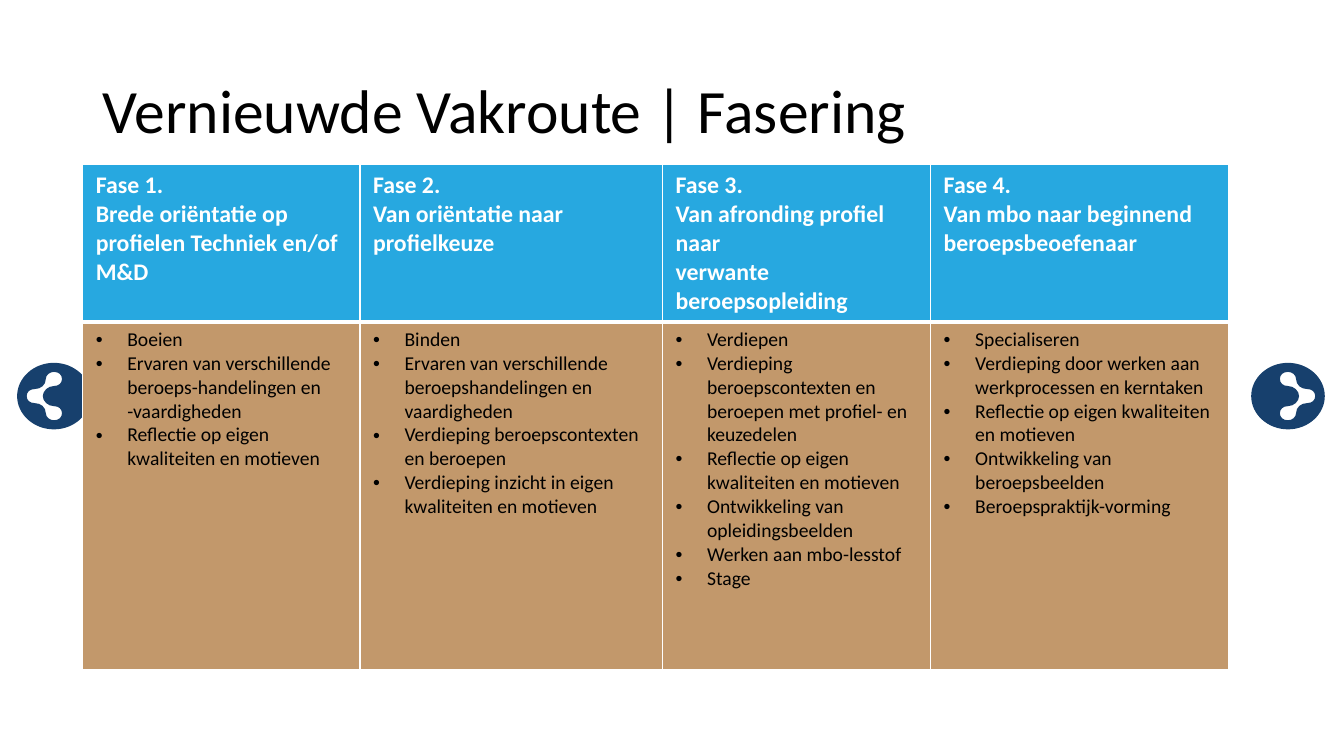
import pptx
import pptx.dml.color
import pptx.enum.text
import pptx.oxml
import pptx.oxml.ns
import pptx.util
from pptx.util import Inches

# Content
TITLE = "Vernieuwde Vakroute | Fasering"
PHASES = [
    (
        ["Fase 1.", "Brede oriëntatie op profielen Techniek en/of M&D"],
        [
            "Boeien",
            "Ervaren van verschillende beroeps-handelingen en -vaardigheden",
            "Reflectie op eigen kwaliteiten en motieven",
        ],
    ),
    (
        ["Fase 2.", "Van oriëntatie naar profielkeuze"],
        [
            "Binden",
            "Ervaren van verschillende beroepshandelingen en vaardigheden",
            "Verdieping beroepscontexten en beroepen",
            "Verdieping inzicht in eigen kwaliteiten en motieven",
        ],
    ),
    (
        ["Fase 3.", "Van afronding profiel naar", "verwante beroepsopleiding"],
        [
            "Verdiepen",
            "Verdieping beroepscontexten en beroepen met profiel- en keuzedelen",
            "Reflectie op eigen kwaliteiten en motieven",
            "Ontwikkeling van opleidingsbeelden",
            "Werken aan mbo-lesstof",
            "Stage",
        ],
    ),
    (
        ["Fase 4.", "Van mbo naar beginnend beroepsbeoefenaar"],
        [
            "Specialiseren",
            "Verdieping door werken aan werkprocessen en kerntaken",
            "Reflectie op eigen kwaliteiten en motieven",
            "Ontwikkeling van beroepsbeelden",
            "Beroepspraktijk-vorming",
        ],
    ),
]

# Style and layout
FONT = "Calibri"
BLACK = pptx.dml.color.RGBColor(0x00, 0x00, 0x00)
WHITE = pptx.dml.color.RGBColor(0xFF, 0xFF, 0xFF)
NAVY = pptx.dml.color.RGBColor(0x17, 0x40, 0x6D)
SKY = pptx.dml.color.RGBColor(0x27, 0xA8, 0xE0)
TAN = pptx.dml.color.RGBColor(0xC2, 0x98, 0x6B)
COLUMN_WIDTHS = [2.75, 3, 2.66, 2.96]
ROW_HEIGHTS = [1.48, 3.45]
BULLET_INDENT = Inches(5 / 16)

# Navigation badges: (left, direction), one mirrored from the other
BADGES = [(12.41, 1), (0.17, -1)]
BADGE_TOP = 3.6
BADGE_WIDTH, BADGE_HEIGHT = 0.73, 0.66
# Upper halves of both outlines around the badge centre: a start point,
# then two control points and an end point for each cubic curve
OPENING = [
    (0.11, 0),
    (0.11, -0.05), (0.06, -0.1), (0, -0.1),
    (-0.05, -0.1), (-0.08, -0.13), (-0.08, -0.17),
    (-0.08, -0.21), (-0.05, -0.24), (0, -0.24),
    (0.04, -0.24), (0.08, -0.21), (0.08, -0.17),
    (0.08, -0.11), (0.13, -0.07), (0.19, -0.07),
    (0.24, -0.07), (0.27, -0.04), (0.27, 0),
]
UNIT_RIM = [(-1, 0), (-1, -0.55), (-0.55, -1), (0, -1), (0.55, -1), (1, -0.55), (1, 0)]
RIM = [(x * BADGE_WIDTH / 2, y * BADGE_HEIGHT / 2) for x, y in UNIT_RIM]


def write_text(text_frame, lines, size, color, bold=False, bulleted=False, spacing=None):
    for index, line in enumerate(lines):
        paragraph = text_frame.paragraphs[0] if index == 0 else text_frame.add_paragraph()
        paragraph.text = line
        paragraph.alignment = pptx.enum.text.PP_ALIGN.LEFT
        if spacing:
            paragraph.line_spacing = spacing
        if bulleted:
            properties = paragraph._p.get_or_add_pPr()
            properties.set("marL", str(BULLET_INDENT))
            properties.set("indent", str(-BULLET_INDENT))
            for tag, name, value in [("buFont", "typeface", "Arial"), ("buChar", "char", "•")]:
                bullet = pptx.oxml.parse_xml(
                    f'<a:{tag} {pptx.oxml.ns.nsdecls("a")} {name}="{value}"/>'
                )
                properties.append(bullet)
        font = paragraph.runs[0].font
        font.name = FONT
        font.size = pptx.util.Pt(size)
        font.bold = bold
        font.color.rgb = color


def set_borders(cell, color, **widths):
    properties = cell._tc.get_or_add_tcPr()
    for index, (side, width) in enumerate(widths.items()):
        border = pptx.oxml.parse_xml(
            f'<a:ln{side} {pptx.oxml.ns.nsdecls("a")} w="{pptx.util.Pt(width)}">'
            f'<a:solidFill><a:srgbClr val="{color}"/></a:solidFill></a:ln{side}>'
        )
        properties.insert(index, border)


def curve_segments(shape):
    """Turn every three line segments into one cubic curve."""
    lines = list(shape._element.iter(pptx.oxml.ns.qn("a:lnTo")))
    for start in range(0, len(lines), 3):
        curve = pptx.oxml.parse_xml(f'<a:cubicBezTo {pptx.oxml.ns.nsdecls("a")}/>')
        lines[start].addprevious(curve)
        for line in lines[start:start + 3]:
            curve.append(line[0])
            line.getparent().remove(line)


def add_badge(slide, left, direction):
    center_x, center_y = left + BADGE_WIDTH / 2, BADGE_TOP + BADGE_HEIGHT / 2
    builder = None
    for half in (OPENING, RIM):
        outline = half + [(x, -y) for x, y in reversed(half[:-1])]
        points = [
            (Inches(center_x + direction * x), Inches(center_y + y)) for x, y in outline
        ]
        if builder is None:
            builder = slide.shapes.build_freeform(*points[0])
        else:
            builder.move_to(*points[0])
        builder.add_line_segments(points[1:], close=False)
    badge = builder.convert_to_shape()
    curve_segments(badge)
    badge.shadow.inherit = False
    badge.fill.solid()
    badge.fill.fore_color.rgb = NAVY
    badge.line.fill.background()


def add_phase_table(slide):
    frame = slide.shapes.add_table(
        len(ROW_HEIGHTS), len(PHASES), Inches(0.82), Inches(1.63),
        Inches(sum(COLUMN_WIDTHS)), Inches(sum(ROW_HEIGHTS)),
    )
    table = frame.table
    table.horz_banding = False
    for column, width in zip(table.columns, COLUMN_WIDTHS):
        column.width = Inches(width)
    for row, height in zip(table.rows, ROW_HEIGHTS):
        row.height = Inches(height)

    for column, (heading, points) in enumerate(PHASES):
        header, body = table.cell(0, column), table.cell(1, column)
        for cell, fill in ((header, SKY), (body, TAN)):
            cell.margin_left = cell.margin_right = Inches(0.13)
            cell.margin_top = cell.margin_bottom = Inches(0.06)
            cell.fill.solid()
            cell.fill.fore_color.rgb = fill
        set_borders(header, WHITE, L=1, R=1, T=1, B=3)
        set_borders(body, WHITE, L=1, R=1, T=3, B=1)
        write_text(header.text_frame, heading, size=17, color=WHITE, bold=True)
        write_text(body.text_frame, points, size=14, color=BLACK, bulleted=True)


def main():
    presentation = pptx.Presentation()
    presentation.slide_width = Inches(13.33)
    presentation.slide_height = Inches(7.5)
    slide = presentation.slides.add_slide(presentation.slide_layouts[5])

    # Title
    title = slide.shapes.title
    title.left, title.top = Inches(0.92), Inches(0.4)
    title.width, title.height = Inches(11.5), Inches(1.45)
    title.text_frame.vertical_anchor = pptx.enum.text.MSO_ANCHOR.MIDDLE
    write_text(title.text_frame, [TITLE], size=44, color=BLACK, spacing=0.9)

    # Badges lie behind the table
    for left, direction in BADGES:
        add_badge(slide, left, direction)
    add_phase_table(slide)

    presentation.save("out.pptx")


if __name__ == "__main__":
    main()
